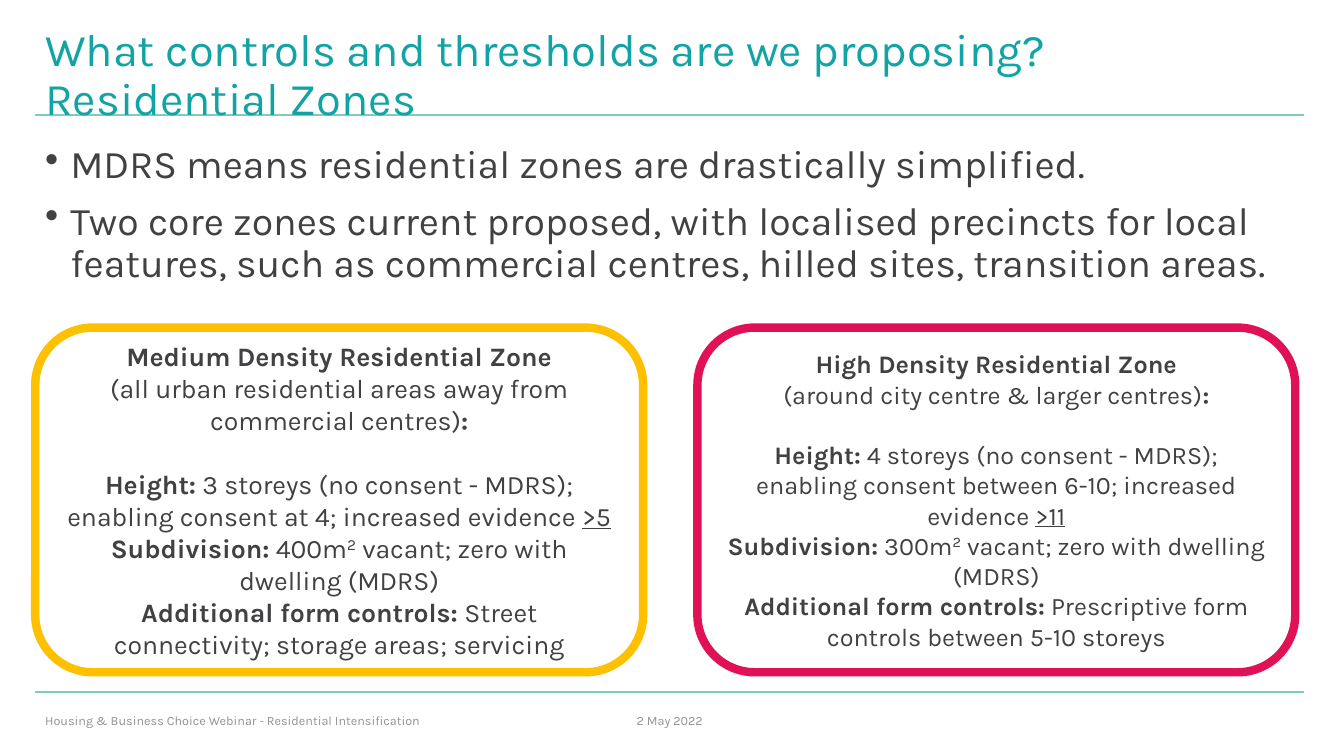
import pptx
import pptx.dml.color
import pptx.enum.shapes
import pptx.enum.text
import pptx.util
import lxml.etree

Pt = pptx.util.Pt
RGBColor = pptx.dml.color.RGBColor
ALIGN = pptx.enum.text.PP_ALIGN
ANCHOR = pptx.enum.text.MSO_ANCHOR

TEAL = RGBColor(0x12, 0xA4, 0xA4)
RULE = RGBColor(0x7C, 0xCC, 0xBF)
INK = RGBColor(0x41, 0x40, 0x42)
GREY = RGBColor(0x93, 0x93, 0x93)
WHITE = RGBColor(0xFF, 0xFF, 0xFF)
AMBER = RGBColor(0xFF, 0xC0, 0x00)
CRIMSON = RGBColor(0xE1, 0x11, 0x56)

LEFT, WIDTH = 25.2, 907.2
FOOTER_TOP, FOOTER_HEIGHT = 500.4, 28.8


class SlideBuilder:
    font_name = "Karla"
    line_height = 1.2
    bullet_indent = 18

    def __init__(self, slide):
        self.slide = slide

    def style(self, font, size, color):
        font.name = self.font_name
        font.size = Pt(size)
        font.color.rgb = color

    def rule(self, y):
        line = self.slide.shapes.add_connector(
            pptx.enum.shapes.MSO_CONNECTOR.STRAIGHT,
            Pt(LEFT), Pt(y), Pt(931.7), Pt(y))
        line.line.color.rgb = RULE
        line.line.width = Pt(1.5)
        properties = line._element.spPr
        lxml.etree.SubElement(properties, pptx.oxml.ns.qn("a:effectLst"))

    def text(self, box, text, size, color, anchor=ANCHOR.MIDDLE,
             align=ALIGN.LEFT, spacing=None, bulleted=False):
        shape = self.slide.shapes.add_textbox(*map(Pt, box))
        frame = shape.text_frame
        frame.word_wrap = True
        frame.vertical_anchor = anchor
        frame.text = text
        for index, paragraph in enumerate(frame.paragraphs):
            paragraph.alignment = align
            paragraph.line_spacing = spacing
            if bulleted:
                if index:
                    paragraph.space_before = Pt(10)
                self.bullet(paragraph)
            for run in paragraph.runs:
                self.style(run.font, size, color)

    def bullet(self, paragraph):
        properties = paragraph._p.get_or_add_pPr()
        properties.set("marL", str(Pt(self.bullet_indent)))
        properties.set("indent", str(-Pt(self.bullet_indent)))
        mark = lxml.etree.SubElement(properties, pptx.oxml.ns.qn("a:buChar"))
        mark.set("char", "•")

    def card(self, left, width, size, border, paragraphs, gap_before):
        """Rounded card; each paragraph is a list of (text, style) runs."""
        shape = self.slide.shapes.add_shape(
            pptx.enum.shapes.MSO_SHAPE.ROUNDED_RECTANGLE,
            Pt(left), Pt(234), Pt(width), Pt(246.2))
        shape.shadow.inherit = False
        shape.fill.solid()
        shape.fill.fore_color.rgb = WHITE
        shape.line.color.rgb = border
        shape.line.width = Pt(6)
        frame = shape.text_frame
        frame.word_wrap = True
        frame.vertical_anchor = ANCHOR.MIDDLE
        for index, runs in enumerate(paragraphs):
            paragraph = frame.add_paragraph() if index else frame.paragraphs[0]
            paragraph.alignment = ALIGN.CENTER
            if index == gap_before:
                paragraph.space_before = Pt(size * self.line_height)
            for text, look in runs:
                run = paragraph.add_run()
                run.text = text
                self.style(run.font, size, INK)
                run.font.bold = look == "bold"
                if look == "underline":
                    run.font.underline = True
                if look == "superscript":
                    run._r.get_or_add_rPr().set("baseline", "30000")


def zone(name, where, height, threshold, lot, vacant, controls):
    """Paragraphs of one zone card."""
    return [
        [(name, "bold")],
        [(where, ""), (":", "bold")],
        [("Height:", "bold"), (height, ""), (threshold, "underline")],
        [("Subdivision:", "bold"), (lot, ""), ("2", "superscript"), (vacant, "")],
        [("Additional form controls:", "bold"), (controls, "")],
    ]


def main():
    presentation = pptx.Presentation()
    presentation.slide_width = Pt(960)
    presentation.slide_height = Pt(540)
    slide = presentation.slides.add_slide(presentation.slide_layouts[6])
    builder = SlideBuilder(slide)

    # Rules
    for y in (494.6, 82.1):
        builder.rule(y)

    # Title and key points
    builder.text((LEFT, 28.8, WIDTH, 51.8),
                 "What controls and thresholds are we proposing?\vResidential Zones",
                 32.4, TEAL, spacing=0.9)
    builder.text((LEFT, 100.1, WIDTH, 113.8),
                 "MDRS means residential zones are drastically simplified.\n"
                 "Two core zones current proposed, with localised precincts for local "
                 "features, such as commercial centres, hilled sites, transition areas.",
                 28, INK, anchor=ANCHOR.TOP, spacing=0.9, bulleted=True)

    # Footer
    builder.text((437, FOOTER_TOP, 82.8, FOOTER_HEIGHT), "2 May 2022",
                 9, GREY, align=ALIGN.CENTER)
    builder.text((LEFT, FOOTER_TOP, 362.2, FOOTER_HEIGHT),
                 "Housing & Business Choice Webinar - Residential Intensification",
                 9, GREY)

    # Zone cards
    vacant = " vacant; zero with dwelling (MDRS)"
    medium = zone(
        "Medium Density Residential Zone",
        "(all urban residential areas away from commercial centres)",
        " 3 storeys (no consent - MDRS); enabling consent at 4; increased evidence ",
        ">5", " 400m", vacant,
        " Street connectivity; storage areas; servicing")
    high = zone(
        "High Density Residential Zone",
        "(around city centre & larger centres)",
        " 4 storeys (no consent - MDRS); enabling consent between 6-10; "
        "increased evidence ",
        ">11", " 300m", vacant,
        " Prescriptive form controls between 5-10 storeys")
    builder.card(LEFT, 434.2, 19, AMBER, medium, gap_before=2)
    builder.card(498.2, 427, 18, CRIMSON, high, gap_before=2)

    presentation.save("out.pptx")


if __name__ == "__main__":
    main()
